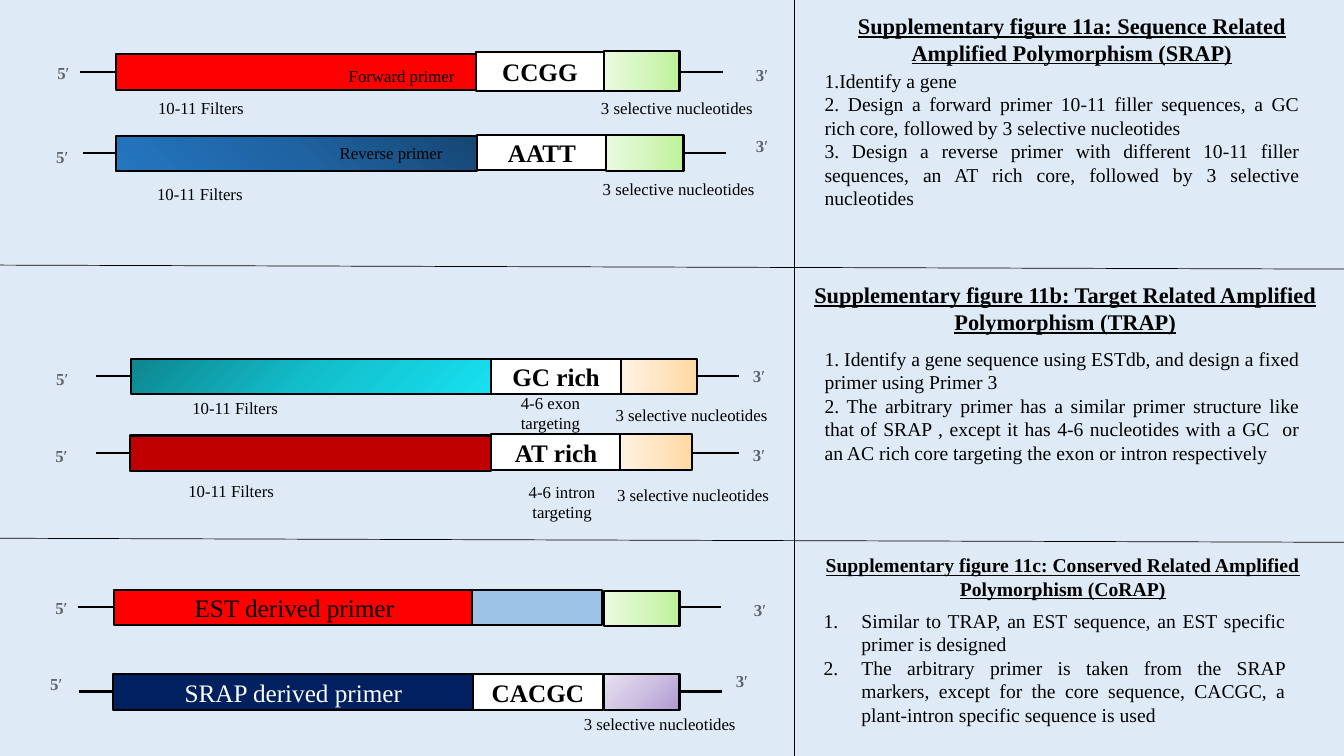
"""Builds the slide that compares the SRAP, TRAP and CoRAP primer designs."""
import copy

import pptx
import pptx.dml.color
import pptx.enum.shapes
import pptx.enum.text
import pptx.oxml
import pptx.oxml.ns
import pptx.util

RGB = pptx.dml.color.RGBColor
ALIGN = pptx.enum.text.PP_ALIGN
RECTANGLE = pptx.enum.shapes.MSO_SHAPE.RECTANGLE
STRAIGHT = pptx.enum.shapes.MSO_CONNECTOR.STRAIGHT

FONT = "Times New Roman"
BLACK = RGB(0x00, 0x00, 0x00)
WHITE = RGB(0xFF, 0xFF, 0xFF)
PALE_BLUE = RGB(0xDE, 0xEB, 0xF7)
RED = RGB(0xFF, 0x00, 0x00)
DARK_RED = RGB(0xC0, 0x00, 0x00)
NAVY = RGB(0x00, 0x20, 0x60)
SKY = RGB(0x9D, 0xC3, 0xE6)
END_GREY = RGB(0x5F, 0x63, 0x68)
PRIME_GREY = RGB(0x4D, 0x51, 0x56)

# Each gradient is a clockwise angle and its start, middle and end colours.
GREEN = (180, RGB(0xBE, 0xF2, 0x97), RGB(0xD5, 0xF6, 0xC0), RGB(0xEA, 0xFA, 0xE0))
ORANGE = (180, RGB(0xFF, 0xD8, 0xA0), RGB(0xFF, 0xE6, 0xC5), RGB(0xFF, 0xF2, 0xE3))
PURPLE = (225, RGB(0xB1, 0x97, 0xD2), RGB(0xCE, 0xC1, 0xE2), RGB(0xE7, 0xE1, 0xF0))
BLUE = (135, RGB(0x16, 0x46, 0x72), RGB(0x1F, 0x63, 0xA2), RGB(0x24, 0x76, 0xC0))
TEAL = (45, RGB(0x0D, 0x85, 0x8F), RGB(0x13, 0xBE, 0xCB), RGB(0x17, 0xE1, 0xF1))

COLUMNS, ROWS = 133.33, 75
STRAND_LENGTH, BAR_WIDTH, BAR_HEIGHT, BAR_RISE = 63.8, 35.8, 3.5, 1.7
END_SIZE = (3.3, 3)

PRIMERS = [
    dict(strand=(7.9, 7.1), bar=(11.5, RED, "", BLACK),
         core=((47.2, 5.2, 12.7, 3.8), WHITE, "CCGG"),
         selective=((59.9, 5.1, 7.5, 3.9), GREEN), five=(4.7, 5.7), three=(74, 5.9)),
    dict(strand=(8.2, 15.2), bar=(11.5, BLUE, "", BLACK),
         core=((47.3, 13.4, 12.9, 3.5), WHITE, "AATT"),
         selective=((60.1, 13.4, 7.7, 3.6), GREEN), five=(4.6, 14.1), three=(74, 13)),
    dict(strand=(9.5, 37.3), bar=(13, TEAL, "", BLACK),
         core=((48.7, 35.6, 12.9, 3.5), WHITE, "GC rich"),
         selective=((61.6, 35.6, 7.5, 3.5), ORANGE), five=(4.6, 36.1), three=(73.7, 35.8)),
    dict(strand=(9.5, 44.9), bar=(12.9, DARK_RED, "", BLACK),
         core=((48.7, 43.1, 12.9, 3.5), WHITE, "AT rich"),
         selective=((61.5, 43.1, 7.1, 3.5), ORANGE), five=(4.5, 43.7), three=(73.7, 43.6)),
    dict(strand=(7.7, 60.2), bar=(11.3, RED, "EST derived primer", BLACK),
         core=((46.8, 58.5, 12.9, 3.5), SKY, ""),
         selective=((59.9, 58.6, 7.5, 3.5), GREEN), five=(4.5, 58.8), three=(73.8, 59)),
    dict(strand=(7.8, 68.6), bar=(11.2, NAVY, "SRAP derived primer", WHITE),
         core=((46.9, 66.9, 12.9, 3.5), WHITE, "CACGC"),
         selective=((59.9, 66.9, 7.5, 3.5), PURPLE), five=(4, 66.3), three=(72, 66.1)),
]

FILTERS, SELECTIVE = "10-11 Filters", "3 selective nucleotides"
CAPTIONS = [
    (FILTERS, (14.7, 9.2, 22, 3), ALIGN.LEFT),
    (FILTERS, (14.6, 17.7, 22, 3), ALIGN.LEFT),
    (FILTERS, (18.1, 39, 22, 3), ALIGN.LEFT),
    (FILTERS, (17.7, 47.2, 22, 3), ALIGN.LEFT),
    ("Forward primer", (33.6, 6, 14.2, 3), ALIGN.LEFT),
    ("Reverse primer", (32.7, 13.7, 14.2, 3), ALIGN.LEFT),
    (SELECTIVE, (58.1, 9.2, 18.1, 3), ALIGN.CENTER),
    (SELECTIVE, (58.8, 17.2, 17.3, 3), ALIGN.LEFT),
    (SELECTIVE, (59.7, 39.7, 17.8, 3), ALIGN.CENTER),
    (SELECTIVE, (59.9, 47.6, 17.7, 3), ALIGN.CENTER),
    (SELECTIVE, (55.6, 70.3, 19.7, 3), ALIGN.CENTER),
    ("4-6 exon targeting", (50.3, 38.5, 8.6, 5), ALIGN.CENTER),
    ("4-6 intron targeting", (51.2, 47.3, 9.1, 5), ALIGN.CENTER),
]

METHODS = [
    dict(title="Supplementary figure 11a: Sequence Related Amplified Polymorphism (SRAP)",
         title_box=(79.2, 0.7, 54.2, 6.4), title_size=16, steps_box=(80.8, 6.3, 49.1, 15.1),
         numbered=False, steps=[
             "1.Identify a gene",
             "2. Design a forward primer 10-11 filler sequences, a GC rich core, "
             "followed by 3 selective nucleotides",
             "3. Design a reverse primer with different 10-11 filler sequences, an AT rich "
             "core, followed by 3 selective nucleotides"]),
    dict(title="Supplementary figure 11b: Target Related Amplified Polymorphism (TRAP)",
         title_box=(78.8, 27.4, 53.7, 6.4), title_size=16, steps_box=(80.8, 33.9, 49.1, 12.8),
         numbered=False, steps=[
             "1. Identify a gene sequence using ESTdb, and design a fixed primer using Primer 3",
             "2. The arbitrary primer has a similar primer structure like that of SRAP , except "
             "it has 4-6 nucleotides with a GC  or an AC rich core targeting the exon or "
             "intron respectively"]),
    dict(title="Supplementary figure 11c: Conserved Related Amplified Polymorphism (CoRAP)",
         title_box=(78.3, 54.4, 54.2, 5.7), title_size=14, steps_box=(80.7, 59.9, 47.8, 12.8),
         numbered=True, steps=[
             "Similar to TRAP, an EST sequence, an EST specific primer is designed",
             "The arbitrary primer is taken from the SRAP markers, except for the core "
             "sequence, CACGC, a plant-intron specific sequence is used"]),
]

DIVIDERS = [((78.8, 0), (78.8, ROWS)),
            ((COLUMNS, 26.7), (0, 26.3)),
            ((COLUMNS, 53.8), (0, 53.4))]

deck = pptx.Presentation()
deck.slide_width, deck.slide_height = pptx.util.Inches(13.33), pptx.util.Inches(7.5)
slide = deck.slides.add_slide(deck.slide_layouts[6])
slide.background.fill.solid()
slide.background.fill.fore_color.rgb = PALE_BLUE


def on_grid(*cells):
    return [round(cell * deck.slide_height / ROWS) for cell in cells]


def write(frame, paragraphs, size=12, color=BLACK, bold=False, underline=False,
          align=ALIGN.LEFT, numbered=False, wrap=True):
    """Fills a frame; each paragraph is a list of (text, color, bold) runs or a string."""
    frame.word_wrap = wrap
    for index, runs in enumerate(paragraphs):
        paragraph = frame.paragraphs[0] if index == 0 else frame.add_paragraph()
        paragraph.alignment = align
        if numbered:
            properties = paragraph._p.get_or_add_pPr()
            properties.set("marL", "342900")
            properties.set("indent", "-342900")
            bullet = pptx.oxml.parse_xml(
                f'<a:buAutoNum {pptx.oxml.ns.nsdecls("a")} type="arabicPeriod"/>')
            properties.append(bullet)
        for text, tint, weight in [(runs, color, bold)] if isinstance(runs, str) else runs:
            run = paragraph.add_run()
            run.text = text
            run.font.name, run.font.size = FONT, pptx.util.Pt(size)
            run.font.bold, run.font.underline = weight, underline
            run.font.color.rgb = tint


def add_text(box, paragraphs, **style):
    frame = slide.shapes.add_textbox(*on_grid(*box)).text_frame
    write(frame, paragraphs, **style)
    frame.auto_size = pptx.enum.text.MSO_AUTO_SIZE.SHAPE_TO_FIT_TEXT


def add_line(start, end, width):
    line = slide.shapes.add_connector(STRAIGHT, *on_grid(*start, *end))
    line.line.color.rgb = BLACK
    line.line.width = pptx.util.Pt(width)
    line._element.spPr.append(
        pptx.oxml.parse_xml(f'<a:effectLst {pptx.oxml.ns.nsdecls("a")}/>'))


def add_segment(box, fill, label="", **style):
    segment = slide.shapes.add_shape(RECTANGLE, *on_grid(*box))
    segment.shadow.inherit = False
    segment.line.color.rgb = BLACK
    segment.line.width = pptx.util.Pt(1.5)
    if isinstance(fill, tuple) and len(fill) == 4:
        angle, *colors = fill
        segment.fill.gradient()
        segment.fill.gradient_angle = 360 - angle
        stop_list = segment._element.spPr.find(".//" + pptx.oxml.ns.qn("a:gsLst"))
        stop_list.insert(1, copy.deepcopy(stop_list[0]))
        stop_list[1].set("pos", "50000")
        for stop, color in zip(segment.fill.gradient_stops, colors):
            stop.color.rgb = color
    else:
        segment.fill.solid()
        segment.fill.fore_color.rgb = fill
    if label:
        segment.text_frame.vertical_anchor = pptx.enum.text.MSO_ANCHOR.MIDDLE
        write(segment.text_frame, [label], size=18, align=ALIGN.CENTER, **style)


for primer in PRIMERS:
    left, level = primer["strand"]
    add_line((left, level), (left + STRAND_LENGTH, level), 1.5)
    bar_left, bar_fill, bar_label, label_color = primer["bar"]
    add_segment((bar_left, level - BAR_RISE, BAR_WIDTH, BAR_HEIGHT), bar_fill, bar_label,
                color=label_color)
    add_segment(*primer["core"], bold=True)
    add_segment(*primer["selective"])
    for digit, corner in (("5", primer["five"]), ("3", primer["three"])):
        add_text(corner + END_SIZE,
                 [[(digit, END_GREY, True), ("′", PRIME_GREY, False)]], wrap=False)

for caption, box, align in CAPTIONS:
    add_text(box, [caption], align=align)

for start, end in DIVIDERS:
    add_line(start, end, 0.5)

for method in METHODS:
    add_text(method["title_box"], [method["title"]], size=method["title_size"],
             bold=True, underline=True, align=ALIGN.CENTER)
    add_text(method["steps_box"], method["steps"], size=14, align=ALIGN.JUSTIFY,
             numbered=method["numbered"])

deck.save("out.pptx")
